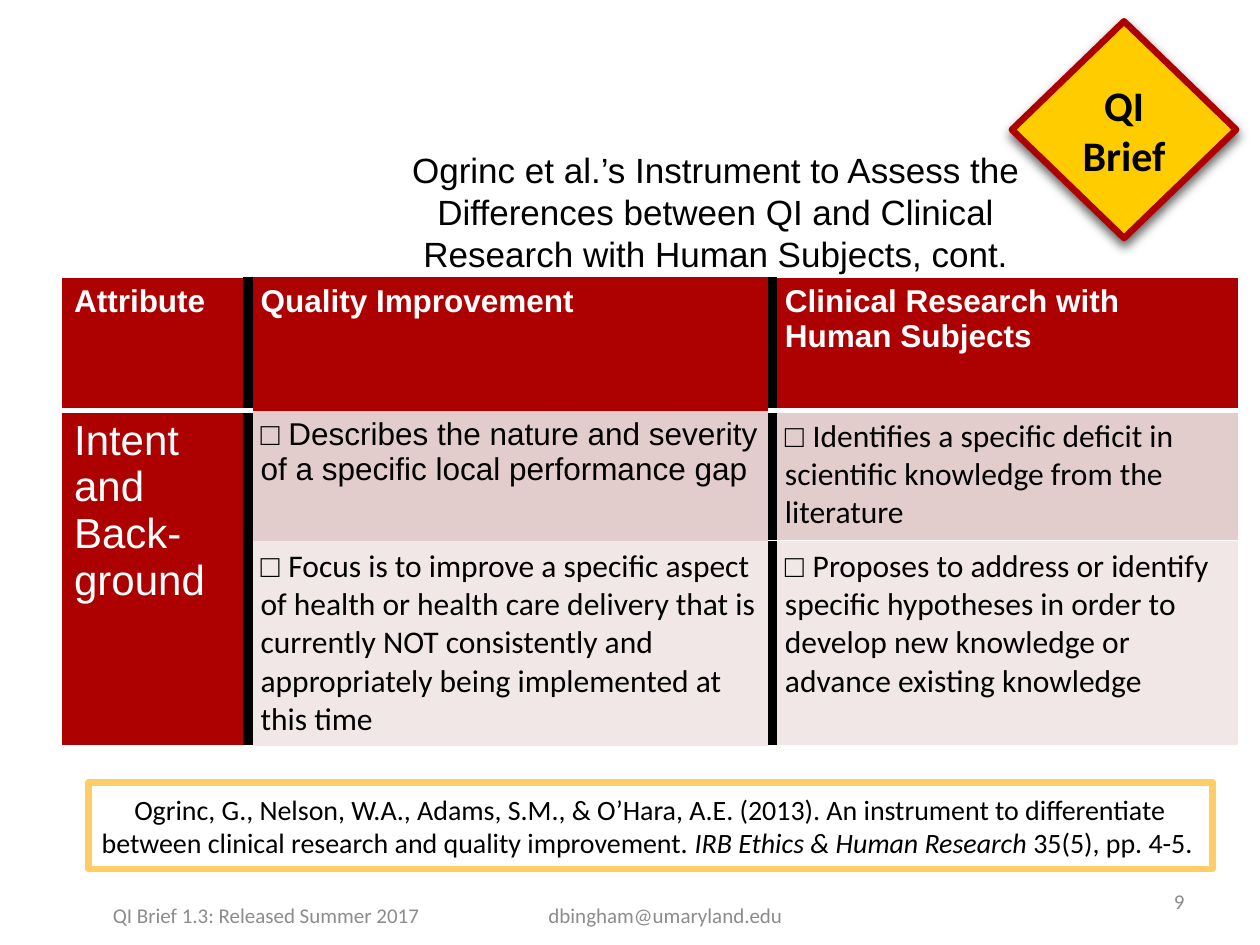
from lxml.etree import SubElement
from pptx import Presentation
from pptx.dml.color import RGBColor
from pptx.enum.shapes import MSO_SHAPE
from pptx.enum.text import MSO_ANCHOR, PP_ALIGN
from pptx.oxml import parse_xml
from pptx.oxml.ns import nsdecls, qn
from pptx.util import Cm, Pt

HUES = {"red": "AD0101", "gold": "FFCC00", "amber": "FFCC66", "rose": "E3CCCC",
        "pale": "F1E7E7", "gray": "8C8C8C", "black": "000000", "white": "FFFFFF"}


def write(frame, runs, size, hue="black", align=PP_ALIGN.LEFT):
    frame.word_wrap = True
    para = frame.paragraphs[0]
    para.alignment = align
    for text, face, bold, slant in runs:
        run = para.add_run()
        run.text = text
        font = run.font
        font.name, font.size, font.bold, font.italic = face, Pt(size), bold, slant
        font.color.rgb = RGBColor.from_string(HUES[hue])


def edge(cell, side, hue, width):
    line = SubElement(cell._tc.get_or_add_tcPr(), qn(f"a:ln{side}"), w=str(Pt(width)))
    fill = SubElement(line, qn("a:solidFill"))
    SubElement(fill, qn("a:srgbClr"), val=HUES[hue])


prs = Presentation()
prs.slide_width, prs.slide_height = Cm(25.4), Cm(19.05)
slide = prs.slides.add_slide(prs.slide_layouts[5])
shapes = slide.shapes

title = shapes.title
title.left, title.top, title.width, title.height = Cm(7.7), Cm(2.67), Cm(13.46), Cm(3.18)
title.text_frame.vertical_anchor = MSO_ANCHOR.MIDDLE
write(title.text_frame, [("Ogrinc et al.’s Instrument to Assess the Differences between QI "
                          "and Clinical Research with Human Subjects, cont.",
                          "Arial", False, False)], 20, "black", PP_ALIGN.CENTER)

badge = [("QI Brief", "Calibri", True, False)]
source = [
    ("Ogrinc, G., Nelson, W.A., Adams, S.M., & O’Hara, A.E. (2013). An instrument to "
     "differentiate between clinical research and quality improvement. ",
     "Calibri", False, False),
    ("IRB Ethics & Human Research ", "Calibri", False, True),
    ("35(5), pp. 4-5. ", "Calibri", False, False),
]
for kind, box, fill, line, runs, size in [
    (MSO_SHAPE.FLOWCHART_DECISION, (20.4, 0.43, 4.52, 4.37), "gold", "red", badge, 24),
    (MSO_SHAPE.RECTANGLE, (1.78, 15.77, 22.66, 1.75), "white", "amber", source, 16),
]:
    shape = shapes.add_shape(kind, *map(Cm, box))
    shape.shadow.inherit = False
    shape.fill.solid()
    shape.fill.fore_color.rgb = RGBColor.from_string(HUES[fill])
    shape.line.color.rgb = RGBColor.from_string(HUES[line])
    shape.line.width = Pt(3.75)
    shape.text_frame.vertical_anchor = MSO_ANCHOR.MIDDLE
    write(shape.text_frame, runs, size, "black", PP_ALIGN.CENTER)
    if kind == MSO_SHAPE.FLOWCHART_DECISION:
        glow = shape._element.spPr.find(qn("a:effectLst"))
        glow.append(parse_xml(
            f'<a:outerShdw {nsdecls("a")} blurRad="{Pt(6)}" dist="{Pt(3)}" dir="5400000" '
            f'rotWithShape="0"><a:srgbClr val="{HUES["black"]}"><a:alpha val="60000"/>'
            '</a:srgbClr></a:outerShdw>'))

cols, rows = (3.76, 10.57, 9.4), (2.69, 2.62, 3.38)
frame = shapes.add_table(3, 3, Cm(1.24), Cm(5.59), Cm(sum(cols)), Cm(sum(rows)))
table = frame.table
table._tbl.tblPr.find(qn("a:tableStyleId")).text = "{2D5ABB26-0587-4C30-8999-92F81FD0307C}"
for col, width in zip(table.columns, cols):
    col.width = Cm(width)
for row, height in zip(table.rows, rows):
    row.height = Cm(height)
table.cell(1, 0).merge(table.cell(2, 0))

cells = [
    [[(text, "Arial", True, False)] for text in
     ("Attribute", "Quality Improvement", "Clinical Research with Human Subjects")],
    [[("Intent and Back-ground", "Arial", False, False)],
     [("□", "Arial", True, False),
      (" Describes the nature and severity of a specific local performance gap",
       "Arial", False, False)],
     [("□ ", "Arial", True, False),
      ("Identifies a specific deficit in scientific knowledge from the literature",
       "Calibri", False, False)]],
    [[],
     [("□ ", "Arial", True, False),
      ("Focus is to improve a specific aspect of health or health care delivery that is "
       "currently NOT consistently and appropriately being implemented at this time",
       "Calibri", False, False)],
     [("□ ", "Arial", True, False),
      ("Proposes to address or identify specific hypotheses in order to develop new "
       "knowledge or advance existing knowledge", "Calibri", False, False)]],
]
for r, line in enumerate(cells):
    for c, runs in enumerate(line):
        cell = table.cell(r, c)
        if c != 1:
            edge(cell, "L", *(("black", 6) if c == 2 else ("white", 1)))
            edge(cell, "R", *(("black", 6) if c == 0 else ("white", 1)))
            edge(cell, "T", "white", 3 if r == 1 else 1)
            edge(cell, "B", "white", 3 if r == 0 else 1)
        else:
            edge(cell, "L", "black", 6)
            edge(cell, "R", "black", 6)
        dark = r == 0 or c == 0
        cell.fill.solid()
        cell.fill.fore_color.rgb = RGBColor.from_string(
            HUES["red" if dark else "rose" if r == 1 else "pale"])
        write(cell.text_frame, runs, 24 if r and c == 0 else 18, "white" if dark else "black")

for text, left, top, width, align in [
    ("QI Brief 1.3: Released Summer 2017", 1.63, 17.93, 7.47, PP_ALIGN.CENTER),
    ("dbingham@umaryland.edu", 9.68, 17.93, 7.47, PP_ALIGN.CENTER),
    ("9", 18.21, 17.65, 5.92, PP_ALIGN.RIGHT),
]:
    foot = shapes.add_textbox(Cm(left), Cm(top), Cm(width), Cm(1.02)).text_frame
    foot.vertical_anchor = MSO_ANCHOR.MIDDLE
    write(foot, [(text, "Calibri", False, False)], 12, "gray", align)

prs.save("out.pptx")
